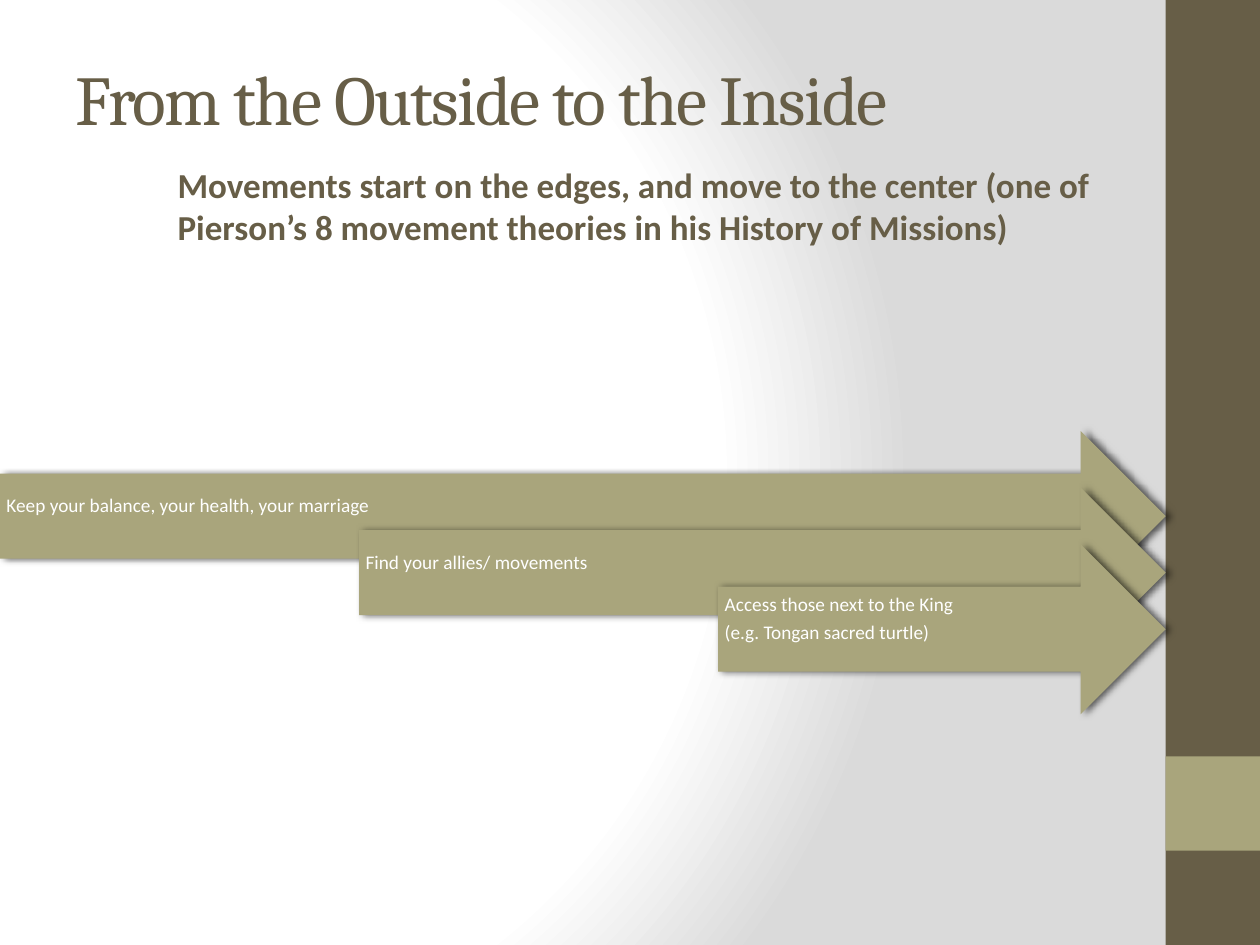
from pptx import Presentation
from pptx import util as u
from pptx.dml.color import RGBColor
from pptx.enum import shapes, text
from pptx.oxml import parse_xml
from pptx.oxml.ns import nsdecls, qn

BROWN, OLIVE, WHITE, GREY = "675E47", "A9A57C", "FFFFFF", "DADADA"
WIDTH, HEIGHT = u.Cm(25.4), u.Cm(19.05)
BAR_LEFT = u.Cm(23.5)
STEPS = [
    ["Keep your balance, your health, your marriage"],
    ["Find your allies/ movements"],
    ["Access those next to the King", "(e.g. Tongan sacred turtle)"],
]


def colour(value):
    return RGBColor.from_string(value)


def style(para, font, size, shade, bold=False):
    para.font.name = font
    para.font.size = u.Pt(size)
    para.font.color.rgb = colour(shade)
    para.font.bold = bold
    para.alignment = text.PP_ALIGN.LEFT


def add_block(parent, kind, box, fill):
    shape = parent.add_shape(kind, *box)
    shape.fill.solid()
    shape.fill.fore_color.rgb = colour(fill)
    shape.line.fill.background()
    shape.shadow.inherit = False
    return shape


def add_background(page):
    stops = "".join(
        f'<a:gs pos="{pos * 1000}"><a:srgbClr val="{shade}"/></a:gs>'
        for pos, shade in [(0, WHITE), (75, WHITE), (100, GREY)])
    page.background.fill.solid()
    props = page.element.find(".//" + qn("p:bgPr"))
    props.replace(props[0], parse_xml(
        f'<a:gradFill {nsdecls("a")} rotWithShape="1"><a:gsLst>{stops}</a:gsLst>'
        '<a:path path="circle"><a:fillToRect l="20000" t="50000" r="100000" b="50000"/>'
        '</a:path></a:gradFill>'))


def add_sidebar(page, left, top, width, height):
    rectangle = shapes.MSO_SHAPE.RECTANGLE
    add_block(page.shapes, rectangle, (left, top, width, height), BROWN)
    # Square accent, one bar width above the bottom edge
    accent_top = top + height - 2 * width
    add_block(page.shapes, rectangle, (left, accent_top, width, width), OLIVE)


def add_heading(page, left, top, width, height):
    # Title
    title = page.shapes.title
    title.left, title.top, title.width, title.height = left, top, width, height
    frame = title.text_frame
    frame.text = "From the Outside to the Inside"
    frame.vertical_anchor = text.MSO_ANCHOR.MIDDLE
    para = frame.paragraphs[0]
    style(para, "Cambria", 40, BROWN)
    para.runs[0].font._element.set("spc", "-100")

    # Indented statement directly below
    box = page.shapes.add_textbox(left, top + height, width, u.Cm(1.07))
    box.text_frame.word_wrap = True
    para = box.text_frame.paragraphs[0]
    para.text = ("Movements start on the edges, and move to the center (one of "
                 "Pierson’s 8 movement theories in his History of Missions)")
    style(para, "Calibri", 20, BROWN, bold=True)
    props = para._p.get_or_add_pPr()
    props.set("marL", str(u.Cm(2.06)))
    props.set("indent", "0")


def add_arrow(group, left, top, width, height, lines):
    arrow = add_block(group.shapes, shapes.MSO_SHAPE.RIGHT_ARROW,
                      (left, top, width, height), OLIVE)
    arrow.element.spPr.find(qn("a:effectLst")).append(parse_xml(
        f'<a:outerShdw {nsdecls("a")} blurRad="{u.Pt(4)}" dist="{u.Pt(2)}" dir="0">'
        '<a:srgbClr val="000000"><a:alpha val="60000"/></a:srgbClr></a:outerShdw>'))

    # Label over the shaft
    box = group.shapes.add_textbox(left, top + height // 4,
                                   width - height // 4, height // 2)
    frame = box.text_frame
    frame.word_wrap = True
    frame.vertical_anchor = text.MSO_ANCHOR.MIDDLE
    frame.margin_left = frame.margin_top = u.Cm(0.13)
    frame.margin_right, frame.margin_bottom = u.Cm(0.71), u.Cm(0.53)
    frame.text = "\n".join(lines)
    for para in frame.paragraphs:
        style(para, "Calibri", 11, WHITE)
        para.line_spacing = 0.9
        para.space_after = u.Pt(3.85)


def add_arrows(page, left, top, width):
    # Each arrow starts further in and lower; all end at the same edge
    group = page.shapes.add_group_shape()
    for index, lines in enumerate(STEPS):
        shift = index * u.Cm(7.24)
        add_arrow(group, left + shift, top + index * u.Cm(1.14),
                  width - shift, u.Cm(3.43), lines)


def main():
    deck = Presentation()
    deck.slide_width, deck.slide_height = WIDTH, HEIGHT
    page = deck.slides.add_slide(deck.slide_layouts.get_by_name("Title Only"))
    add_background(page)
    add_sidebar(page, BAR_LEFT, 0, WIDTH - BAR_LEFT, HEIGHT)
    add_heading(page, u.Cm(1.27), u.Cm(0.76), u.Cm(21.16), u.Cm(2.41))
    add_arrows(page, 0, u.Cm(8.69), BAR_LEFT)
    deck.save("out.pptx")


if __name__ == "__main__":
    main()
